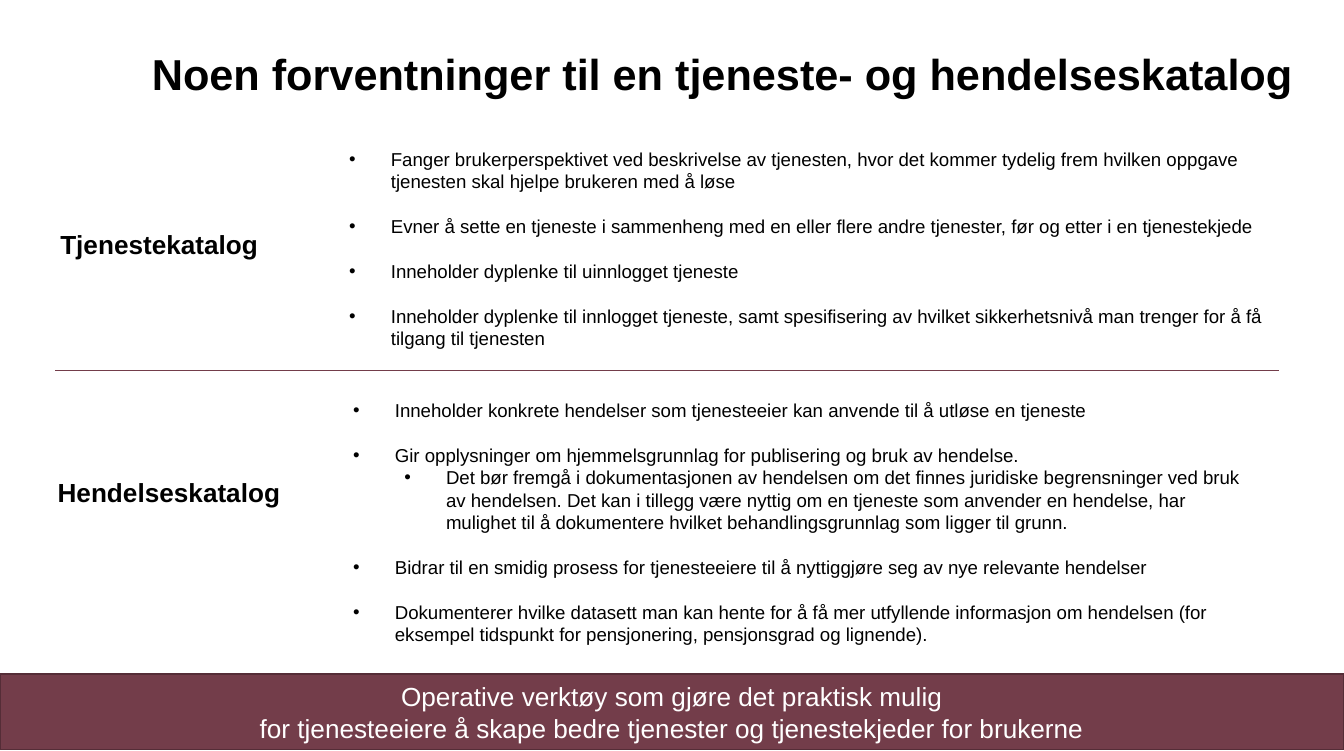
from pptx import Presentation
from pptx.dml.color import RGBColor
from pptx.enum.shapes import MSO_CONNECTOR, MSO_SHAPE
from pptx.enum.text import MSO_ANCHOR, PP_ALIGN
from pptx.oxml.ns import qn
from pptx.util import Inches, Pt
from lxml import etree


def color(value):
    return RGBColor.from_string(value)


def write(shape, lines, size, font_color="000000", bold=False):
    frame = shape.text_frame
    frame.word_wrap = True
    frame.text = "\n".join(lines)
    for paragraph in frame.paragraphs:
        for run in paragraph.runs:
            run.font.name = "Arial"
            run.font.size = Pt(size)
            run.font.bold = bold
            run.font.color.rgb = color(font_color)
    return frame


presentation = Presentation()
presentation.slide_width = Inches(10)
presentation.slide_height = Inches(5.59)
slide = presentation.slides.add_slide(presentation.slide_layouts[6])

title = slide.shapes.add_textbox(Inches(1.13), Inches(0.23), Inches(8.64), Inches(0.5))
frame = write(title, ["Noen forventninger til en tjeneste- og hendelseskatalog"], 23.2, bold=True)
frame.margin_left = frame.margin_top = frame.margin_right = frame.margin_bottom = 0
frame.vertical_anchor = MSO_ANCHOR.BOTTOM
frame.paragraphs[0].line_spacing = 0.7

headings = [
    ("Tjenestekatalog", 0.35, 1.65, 1.79),
    ("Hendelseskatalog", 0.33, 3.5, 1.91),
]
for text, left, top, width in headings:
    heading = slide.shapes.add_textbox(Inches(left), Inches(top), Inches(width), Inches(0.34))
    write(heading, [text], 14, bold=True)

service_points = [
    (0, "Fanger brukerperspektivet ved beskrivelse av tjenesten, hvor det kommer tydelig frem hvilken oppgave tjenesten skal hjelpe brukeren med å løse"),
    (0, "Evner å sette en tjeneste i sammenheng med en eller flere andre tjenester, før og etter i en tjenestekjede"),
    (0, "Inneholder dyplenke til uinnlogget tjeneste"),
    (0, "Inneholder dyplenke til innlogget tjeneste, samt spesifisering av hvilket sikkerhetsnivå man trenger for å få tilgang til tjenesten"),
]
event_points = [
    (0, "Inneholder konkrete hendelser som tjenesteeier kan anvende til å utløse en tjeneste"),
    (0, "Gir opplysninger om hjemmelsgrunnlag for publisering og bruk av hendelse."),
    (1, "Det bør fremgå i dokumentasjonen av hendelsen om det finnes juridiske begrensninger ved bruk av hendelsen. Det kan i tillegg være nyttig om en tjeneste som anvender en hendelse, har mulighet til å dokumentere hvilket behandlingsgrunnlag som ligger til grunn."),
    (0, "Bidrar til en smidig prosess for tjenesteeiere til å nyttiggjøre seg av nye relevante hendelser"),
    (0, "Dokumenterer hvilke datasett man kan hente for å få mer utfyllende informasjon om hendelsen (for eksempel tidspunkt for pensjonering, pensjonsgrad og lignende)."),
]
point_lists = [
    (service_points, 2.5, 1.05, 7.08, 1.78),
    (event_points, 2.53, 2.92, 6.92, 1.95),
]
for points, left, top, width, height in point_lists:
    box = slide.shapes.add_textbox(Inches(left), Inches(top), Inches(width), Inches(height))
    frame = write(box, [text for level, text in points], 10)
    for index, (paragraph, (level, text)) in enumerate(zip(frame.paragraphs, points)):
        paragraph.level = level
        if index and level == 0:
            paragraph.space_before = Pt(12)
        properties = paragraph._p.get_or_add_pPr()
        properties.set("marL", str(Inches(0.69 if level else 0.31)))
        properties.set("indent", str(Inches(-0.31)))
        etree.SubElement(properties, qn("a:buFont")).set("typeface", "Arial")
        etree.SubElement(properties, qn("a:buChar")).set("char", "•")

banner = slide.shapes.add_shape(MSO_SHAPE.RECTANGLE, 0, Inches(5.02), Inches(10), Inches(0.56))
banner.shadow.inherit = False
banner.fill.solid()
banner.fill.fore_color.rgb = color("733D4A")
banner.line.color.rgb = color("552D37")
banner.line.width = Pt(1)
banner_lines = [
    "Operative verktøy som gjøre det praktisk mulig",
    "for tjenesteeiere å skape bedre tjenester og tjenestekjeder for brukerne",
]
frame = write(banner, banner_lines, 14, "FFFFFF")
frame.vertical_anchor = MSO_ANCHOR.MIDDLE
for paragraph in frame.paragraphs:
    paragraph.alignment = PP_ALIGN.CENTER

divider = slide.shapes.add_connector(
    MSO_CONNECTOR.STRAIGHT, Inches(0.41), Inches(2.76), Inches(9.52), Inches(2.76)
)
divider.line.color.rgb = color("733D4A")
divider.line.width = Pt(0.5)
etree.SubElement(divider._element.spPr, qn("a:effectLst"))

presentation.save("out.pptx")
